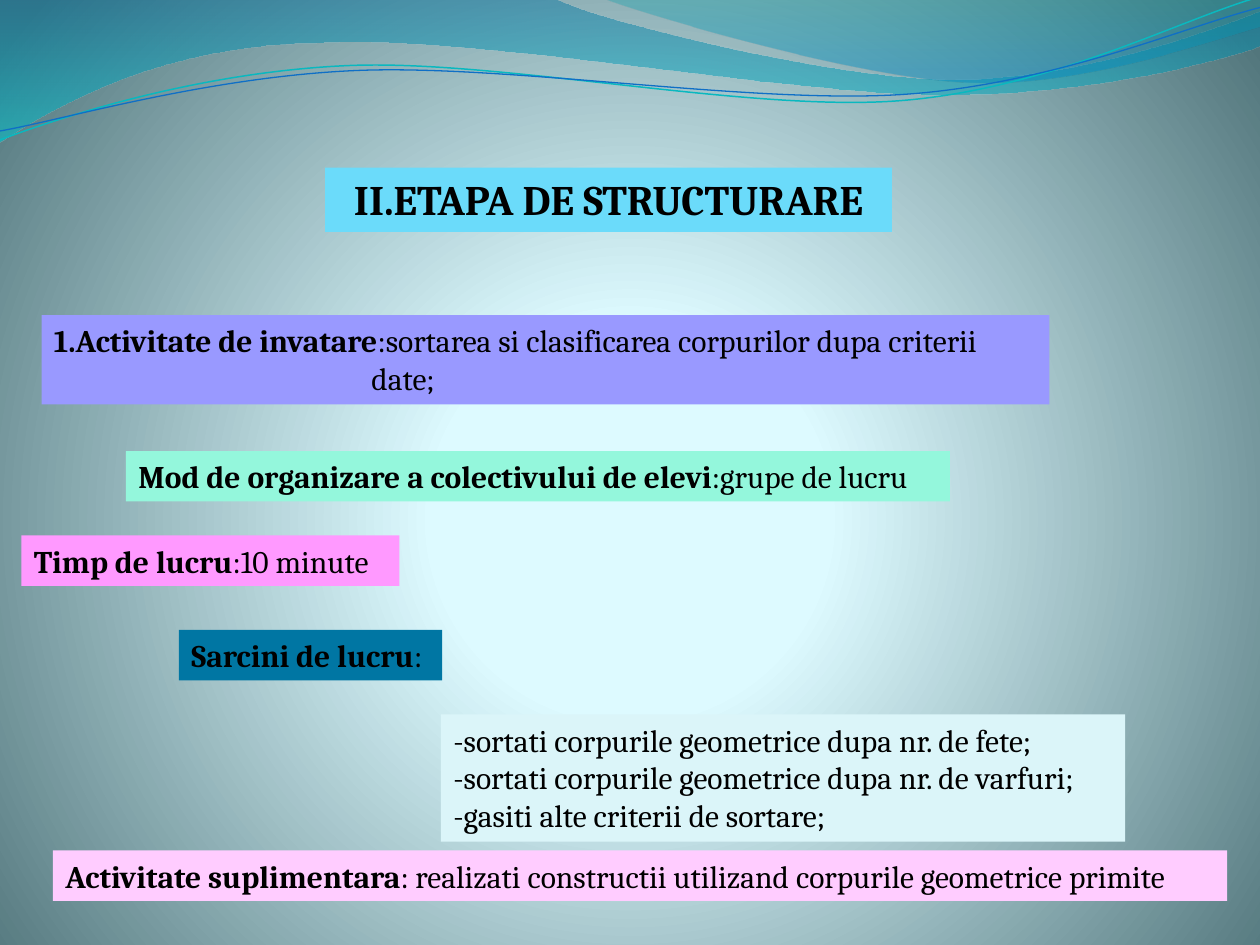
import math
from dataclasses import dataclass

import lxml.etree
import pptx
import pptx.dml.color
import pptx.enum.shapes
import pptx.enum.text
import pptx.oxml.ns
import pptx.util

RGBColor = pptx.dml.color.RGBColor
Inches = pptx.util.Inches
Pt = pptx.util.Pt
qn = pptx.oxml.ns.qn

BLACK = RGBColor(0x00, 0x00, 0x00)
SKY = RGBColor(0x6B, 0xDB, 0xFA)
LAVENDER = RGBColor(0x99, 0x99, 0xFF)
MINT = RGBColor(0x94, 0xF7, 0xDC)
PINK = RGBColor(0xFF, 0x99, 0xFF)
OCEAN = RGBColor(0x00, 0x76, 0xA3)
ICE = RGBColor(0xDB, 0xF5, 0xF9)
ROSE = RGBColor(0xFF, 0xCC, 0xFF)
DEEP_BLUE = RGBColor(0x00, 0x74, 0xA1)
TURQUOISE = RGBColor(0x00, 0xC6, 0xCF)
TEAL = RGBColor(0x00, 0xA1, 0xA9)
AZURE = RGBColor(0x00, 0x8B, 0xBF)
AQUA_LINE = RGBColor(0x0A, 0xB8, 0xBF)
BLUE_LINE = RGBColor(0x0F, 0x6F, 0xC6)
GLOW = RGBColor(0xDE, 0xFB, 0xFF)
GLOW_EDGE = RGBColor(0xDD, 0xFA, 0xFF)
SLATE = RGBColor(0x52, 0x76, 0x7C)

FONT = "Cambria"
LINE_TILT = 357.3

Point = tuple[float, float]


@dataclass(frozen=True)
class Stop:
    position: int
    color: RGBColor
    opacity: int = 100


@dataclass(frozen=True)
class Wave:
    start: Point
    segments: tuple[tuple[Point, ...], ...]
    stops: tuple[Stop, ...] = ()
    line_color: RGBColor = BLACK
    line_width: float = 0
    rotation: float = 0
    center: Point = (0, 0)


@dataclass(frozen=True)
class Label:
    left: float
    top: float
    width: float
    height: float
    color: RGBColor
    lines: tuple[tuple[str, str], ...]
    size: int = 18
    centered: bool = False
    wrapped: bool = False
    last_indent: float = 0


WAVES = (
    Wave((0, -0.01), (
        ((4.4, -0.01),),
        ((4.76, 0.17), (6.64, 0.63), (7.58, 0.63)),
        ((8.53, 0.63), (9.58, 0.26), (10, 0.09)),
        ((10.01, 0.36),),
        ((9.83, 0.44), (8.7, 0.76), (7.46, 0.75)),
        ((6.22, 0.75), (3.82, 0.28), (2.57, 0.34)),
        ((1.29, 0.35), (0.46, 0.83), (-0.01, 1.13)),
        ((0, -0.01),),
    ), stops=(Stop(0, DEEP_BLUE, 45), Stop(100, TURQUOISE, 55))),
    Wave((4.79, -0.01), (
        ((5.09, 0.11), (6.82, 0.62), (7.69, 0.65)),
        ((8.56, 0.69), (9.61, 0.32), (10, 0.21)),
        ((10, 0),),
        ((4.79, -0.01),),
    ), stops=(Stop(0, TEAL, 30), Stop(80, AZURE, 45))),
    Wave((0, 1.11), (
        ((0.48, 0.93), (1.58, 0.57), (2.77, 0.52)),
        ((3.95, 0.47), (5.93, 0.89), (7.13, 0.8)),
        ((8.33, 0.71), (9.38, 0.15), (9.98, -0.02)),
    ), line_color=AQUA_LINE, line_width=0.85, rotation=LINE_TILT, center=(4.99, 0.58)),
    Wave((0, 1.04), (
        ((0.47, 0.96), (1.64, 0.61), (2.83, 0.56)),
        ((4.03, 0.51), (5.97, 0.83), (7.17, 0.75)),
        ((8.36, 0.67), (9.41, 0.21), (10, 0.06)),
    ), line_color=BLUE_LINE, line_width=0.75, rotation=LINE_TILT, center=(5, 0.59)),
)

LABELS = (
    Label(2.58, 1.33, 4.5, 0.51, SKY, (("II.ETAPA DE STRUCTURARE", ""),),
          size=24, centered=True, wrapped=True),
    Label(0.33, 2.5, 8, 0.71, LAVENDER, (
        ("1.Activitate de invatare", ":sortarea si clasificarea corpurilor dupa criterii"),
        ("", "date;"),
    ), wrapped=True, last_indent=2.52),
    Label(1, 3.58, 6.54, 0.4, MINT,
          (("Mod de organizare a colectivului de elevi", ":grupe de lucru"),)),
    Label(0.17, 4.25, 3, 0.4, PINK, (("Timp de lucru", ":10 minute"),)),
    Label(1.42, 5, 2.09, 0.4, OCEAN, (("Sarcini de lucru", ":"),)),
    Label(3.5, 5.67, 5.43, 1.01, ICE, (
        ("", "-sortati corpurile geometrice dupa nr. de fete;"),
        ("", "-sortati corpurile geometrice dupa nr. de varfuri;"),
        ("", "-gasiti alte criterii de sortare;"),
    )),
    Label(0.42, 6.75, 9.32, 0.4, ROSE, ((
        "Activitate suplimentara",
        ": realizati constructii utilizand corpurile geometrice primite"),)),
)


def set_stops(gradient, stops: tuple[Stop, ...]) -> None:
    stop_list = gradient.find(qn("a:gsLst"))
    for old_stop in list(stop_list):
        stop_list.remove(old_stop)
    for stop in stops:
        entry = lxml.etree.SubElement(stop_list, qn("a:gs"), pos=str(stop.position * 1000))
        color = lxml.etree.SubElement(entry, qn("a:srgbClr"), val=str(stop.color))
        if stop.opacity < 100:
            lxml.etree.SubElement(color, qn("a:alpha"), val=str(stop.opacity * 1000))


def paint_background(slide) -> None:
    slide.background.fill.gradient()
    gradient = slide.element.find(".//" + qn("a:gradFill"))
    set_stops(gradient, (Stop(0, GLOW), Stop(25, GLOW_EDGE), Stop(100, SLATE)))
    circle = lxml.etree.Element(qn("a:path"), path="circle")
    lxml.etree.SubElement(circle, qn("a:fillToRect"),
                          l="10000", t="110000", r="10000", b="100000")
    gradient.replace(gradient.find(qn("a:lin")), circle)


def level_point(wave: Wave, point: Point) -> tuple[int, int]:
    angle = math.radians(-wave.rotation)
    dx, dy = point[0] - wave.center[0], point[1] - wave.center[1]
    return (Inches(wave.center[0] + dx * math.cos(angle) - dy * math.sin(angle)),
            Inches(wave.center[1] + dx * math.sin(angle) + dy * math.cos(angle)))


def bend_segments(shape, wave: Wave) -> None:
    edges = iter(shape.element.findall(".//" + qn("a:lnTo")))
    for segment in wave.segments:
        first = next(edges)
        if len(segment) == 3:
            first.tag = qn("a:cubicBezTo")
            for edge in (next(edges), next(edges)):
                first.append(edge[0])
                edge.getparent().remove(edge)


def draw_wave(slide, wave: Wave) -> None:
    points = [level_point(wave, point) for segment in wave.segments for point in segment]
    builder = slide.shapes.build_freeform(*level_point(wave, wave.start))
    builder.add_line_segments(points, close=bool(wave.stops))
    shape = builder.convert_to_shape()
    bend_segments(shape, wave)
    shape.rotation = wave.rotation
    shape.shadow.inherit = False
    if wave.stops:
        shape.fill.gradient()
        shape.fill.gradient_angle = 270
        set_stops(shape.element.find(".//" + qn("a:gradFill")), wave.stops)
        shape.line.fill.background()
    else:
        shape.fill.background()
        shape.line.color.rgb = wave.line_color
        shape.line.width = Pt(wave.line_width)


def draw_label(slide, label: Label) -> None:
    shape = slide.shapes.add_shape(
        pptx.enum.shapes.MSO_SHAPE.RECTANGLE, Inches(label.left), Inches(label.top),
        Inches(label.width), Inches(label.height))
    shape.shadow.inherit = False
    shape.fill.solid()
    shape.fill.fore_color.rgb = label.color
    shape.line.fill.background()
    text_frame = shape.text_frame
    text_frame.word_wrap = label.wrapped
    text_frame.auto_size = pptx.enum.text.MSO_AUTO_SIZE.SHAPE_TO_FIT_TEXT
    text_frame.vertical_anchor = pptx.enum.text.MSO_ANCHOR.TOP
    alignment = pptx.enum.text.PP_ALIGN
    for index, (heading, detail) in enumerate(label.lines):
        paragraph = text_frame.add_paragraph() if index else text_frame.paragraphs[0]
        paragraph.alignment = alignment.CENTER if label.centered else alignment.LEFT
        for text, bold in ((heading, True), (detail, False)):
            if text:
                run = paragraph.add_run()
                run.text = text
                run.font.name = FONT
                run.font.size = Pt(label.size)
                run.font.bold = bold
                run.font.color.rgb = BLACK
    if label.last_indent:
        properties = text_frame.paragraphs[-1]._p.get_or_add_pPr()
        properties.set("marL", str(Inches(label.last_indent)))


def main() -> None:
    presentation = pptx.Presentation()
    presentation.slide_width = Inches(10)
    presentation.slide_height = Inches(7.5)
    slide = presentation.slides.add_slide(presentation.slide_layouts[6])
    paint_background(slide)
    for wave in WAVES:
        draw_wave(slide, wave)
    for label in LABELS:
        draw_label(slide, label)
    presentation.save("out.pptx")


if __name__ == "__main__":
    main()
